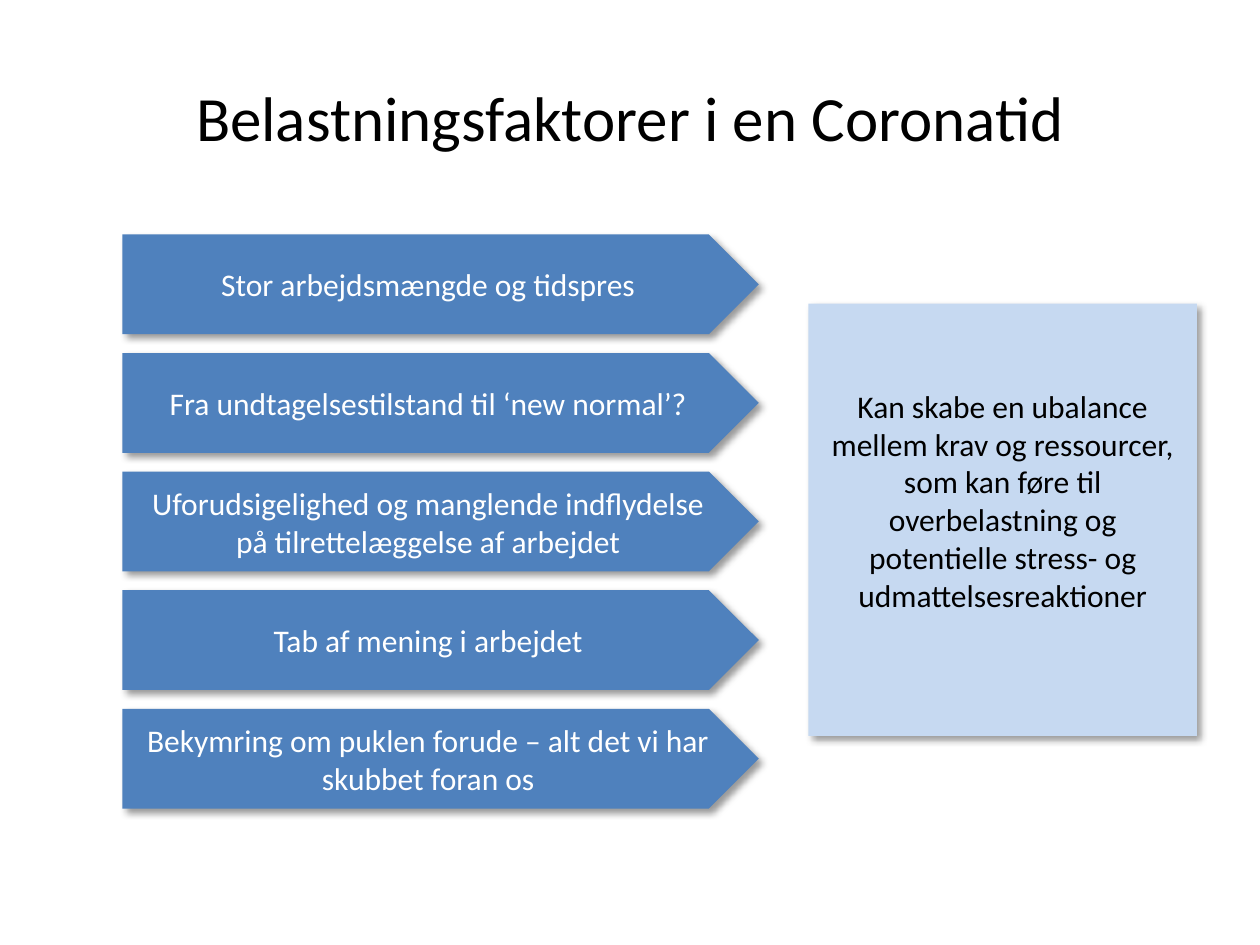
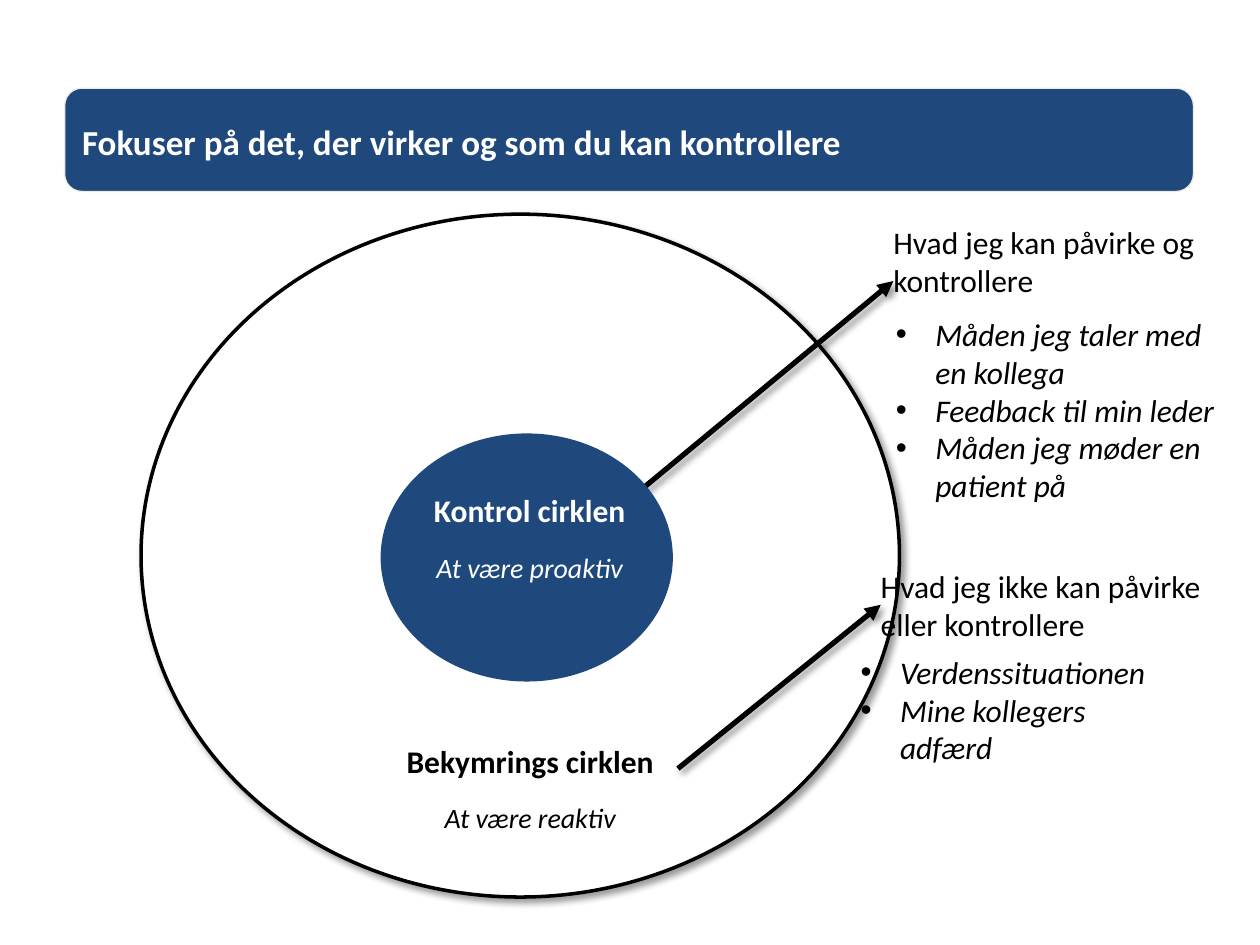
from dataclasses import dataclass

from lxml.etree import SubElement
from pptx import Presentation
from pptx.dml.color import RGBColor
from pptx.enum.shapes import MSO_CONNECTOR, MSO_SHAPE
from pptx.enum.text import MSO_ANCHOR, PP_ALIGN
from pptx.oxml.ns import qn
from pptx.util import Pt


@dataclass(frozen=True)
class Theme:
    font: str = "Calibri"
    black: str = "000000"
    white: str = "FFFFFF"
    blue: str = "4F81BD"
    navy: str = "1F497D"
    pale: str = "C6D9F1"
    cream: str = "EEECE1"
    title: int = 36
    band: int = 20
    body: int = 18
    small: int = 16


THEME = Theme()


class Deck:
    def __init__(self, theme):
        self.theme = theme
        self.prs = Presentation()
        self.prs.slide_width, self.prs.slide_height = Pt(720), Pt(540)
        self.slide = None

    def page(self):
        self.slide = self.prs.slides.add_slide(self.prs.slide_layouts[6])

    def shade(self, shape):
        """Cast a soft shadow down to the right."""
        props = shape._element.spPr
        effects = props.find(qn("a:effectLst"))
        if effects is None:
            effects = SubElement(props, qn("a:effectLst"))
        shadow = SubElement(effects, qn("a:outerShdw"), blurRad=str(Pt(4)),
                            dist=str(Pt(3)), dir="2700000", rotWithShape="0")
        color = SubElement(shadow, qn("a:srgbClr"), val=self.theme.black)
        SubElement(color, qn("a:alpha"), val="40000")

    def style(self, par, size, color, bold=False, italic=False):
        for run in par.runs:
            font = run.font
            font.name, font.size = self.theme.font, Pt(size)
            font.bold, font.italic = bold, italic
            font.color.rgb = RGBColor.from_string(color)

    def shape(self, kind, box, fill, line=None, width=1, shadow=False):
        item = self.slide.shapes.add_shape(kind, *map(Pt, box))
        item.fill.solid()
        item.fill.fore_color.rgb = RGBColor.from_string(fill)
        if line:
            item.line.color.rgb = RGBColor.from_string(line)
            item.line.width = Pt(width)
        else:
            item.line.fill.background()
        item.shadow.inherit = False
        if shadow:
            self.shade(item)
        return item

    def label(self, item, text, size, color, align=PP_ALIGN.CENTER,
              anchor=MSO_ANCHOR.MIDDLE, bold=False):
        frame = item.text_frame
        frame.word_wrap = True
        frame.vertical_anchor = anchor
        frame.text = text
        par = frame.paragraphs[0]
        par.alignment = align
        self.style(par, size, color, bold)
        return frame

    def title(self, text):
        item = self.slide.shapes.add_textbox(Pt(36), Pt(21.6), Pt(648), Pt(90))
        self.label(item, text, self.theme.title, self.theme.black)

    def band(self, text):
        item = self.shape(MSO_SHAPE.ROUNDED_RECTANGLE, (37, 50.4, 645, 59),
                          self.theme.navy, self.theme.cream, 0.75)
        frame = self.label(item, text, self.theme.band, self.theme.white,
                           PP_ALIGN.LEFT, bold=True)
        frame.paragraphs[0].line_spacing = 1.08

    def text(self, box, text, align=PP_ALIGN.LEFT):
        """Place text in a box without margins."""
        frame = self.slide.shapes.add_textbox(*map(Pt, box)).text_frame
        frame.word_wrap = True
        frame.margin_left = frame.margin_right = 0
        frame.margin_top = frame.margin_bottom = 0
        frame.text = text
        for par in frame.paragraphs:
            par.alignment = align
            self.style(par, self.theme.body, self.theme.black)
        return frame

    def name(self, box, head, note, color):
        """Name a circle, with its attitude in italics below."""
        frame = self.text(box, f"{head}\n{note}", PP_ALIGN.CENTER)
        top, low = frame.paragraphs
        self.style(top, self.theme.body, color, bold=True)
        self.style(low, self.theme.small, color, italic=True)
        low.space_before = Pt(12)

    def list(self, box, rows):
        for par in self.text(box, "\n".join(rows)).paragraphs:
            props = par._p.get_or_add_pPr()
            props.set("marL", str(Pt(22.5)))
            props.set("indent", str(-Pt(22.5)))
            SubElement(props, qn("a:buFont"), typeface="Arial")
            SubElement(props, qn("a:buChar"), char="•")
            self.style(par, self.theme.body, self.theme.black, italic=True)

    def arrow(self, start, end):
        item = self.slide.shapes.add_connector(
            MSO_CONNECTOR.STRAIGHT, *map(Pt, start + end))
        item.line.color.rgb = RGBColor.from_string(self.theme.black)
        item.line.width = Pt(3)
        SubElement(item.line._get_or_add_ln(), qn("a:tailEnd"), type="triangle")
        self.shade(item)


def strain(deck):
    deck.page()
    deck.title("Belastningsfaktorer i en Coronatid")
    factors = (
        "Stor arbejdsmængde og tidspres",
        "Fra undtagelsestilstand til ‘new normal’?",
        "Uforudsigelighed og manglende indflydelse på tilrettelæggelse af arbejdet",
        "Tab af mening i arbejdet",
        "Bekymring om puklen forude – alt det vi har skubbet foran os",
    )
    for row, factor in enumerate(factors):
        box = (70, 134 + row * 67.75, 363.6, 57)
        item = deck.shape(MSO_SHAPE.PENTAGON, box, THEME.blue, shadow=True)
        deck.label(item, factor, THEME.body, THEME.white)
    result = deck.shape(MSO_SHAPE.RECTANGLE, (462, 173.5, 222, 247),
                        THEME.pale, shadow=True)
    frame = deck.label(
        result, "Kan skabe en ubalance mellem krav og ressourcer, som kan føre til "
        "overbelastning og potentielle stress- og udmattelsesreaktioner",
        THEME.body, THEME.black, anchor=MSO_ANCHOR.TOP)
    frame.margin_top = Pt(47.5)


def focus(deck):
    deck.page()
    deck.shape(MSO_SHAPE.OVAL, (80.6, 122.4, 433.4, 390.2), THEME.white,
               THEME.black, 2, shadow=True)
    deck.name((183, 424, 240, 53), "Bekymrings cirklen", "At være reaktiv",
              THEME.black)
    deck.text((510.5, 127.5, 175.7, 44), "Hvad jeg kan påvirke og kontrollere")
    deck.text((503.3, 324, 199.4, 44),
              "Hvad jeg ikke kan påvirke eller kontrollere")
    deck.arrow((355.7, 288.7), (510.5, 160.6))
    deck.shape(MSO_SHAPE.OVAL, (217.5, 247.7, 167, 141.8), THEME.navy)
    deck.name((223.2, 280.8, 159, 53), "Kontrol cirklen", "At være proaktiv",
              THEME.white)
    deck.list((512, 180, 183, 174), (
        "Måden jeg taler med en kollega",
        "Feedback til min leder",
        "Måden jeg møder en patient på",
    ))
    deck.arrow((387.4, 439.2), (503.3, 345.6))
    deck.band("Fokuser på det, der virker og som du kan kontrollere")
    deck.list((491.8, 373, 183, 65.5),
              ("Verdenssituationen", "Mine kollegers adfærd"))


def main():
    deck = Deck(THEME)
    strain(deck)
    focus(deck)
    deck.prs.save("out.pptx")


if __name__ == "__main__":
    main()
